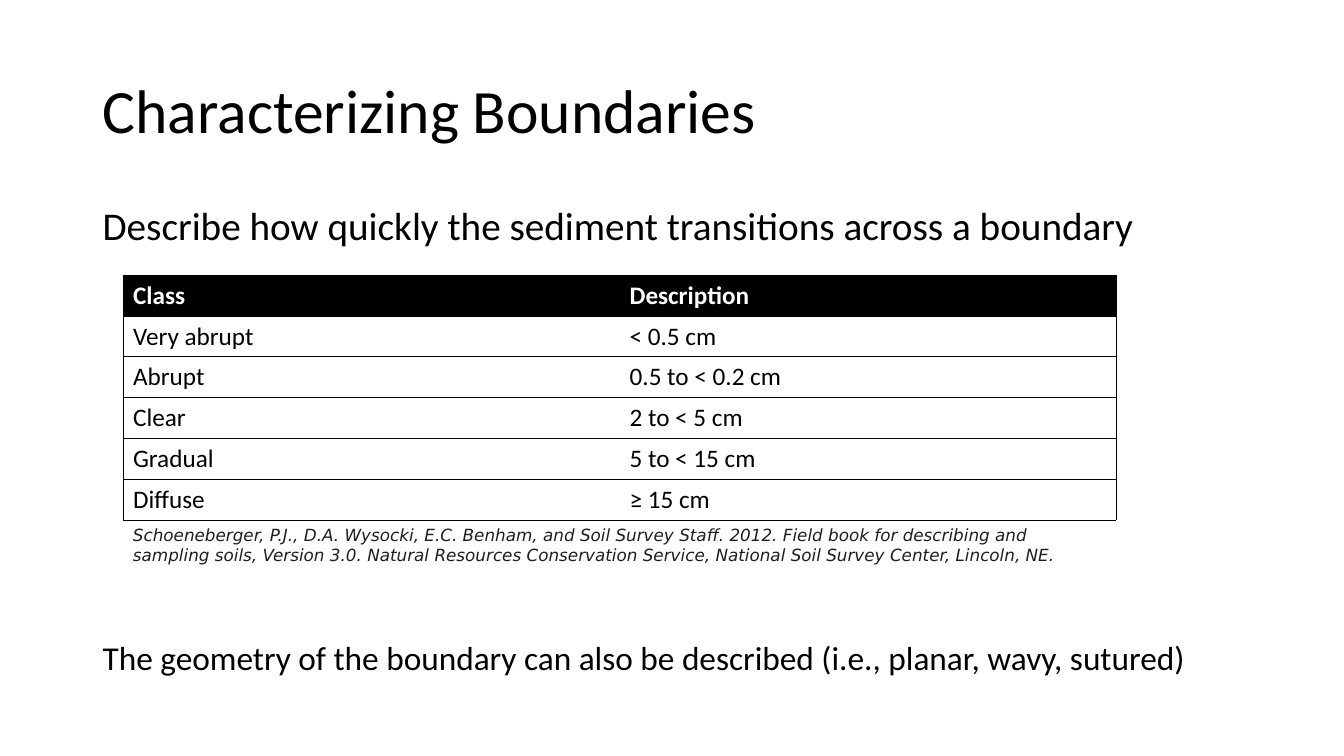
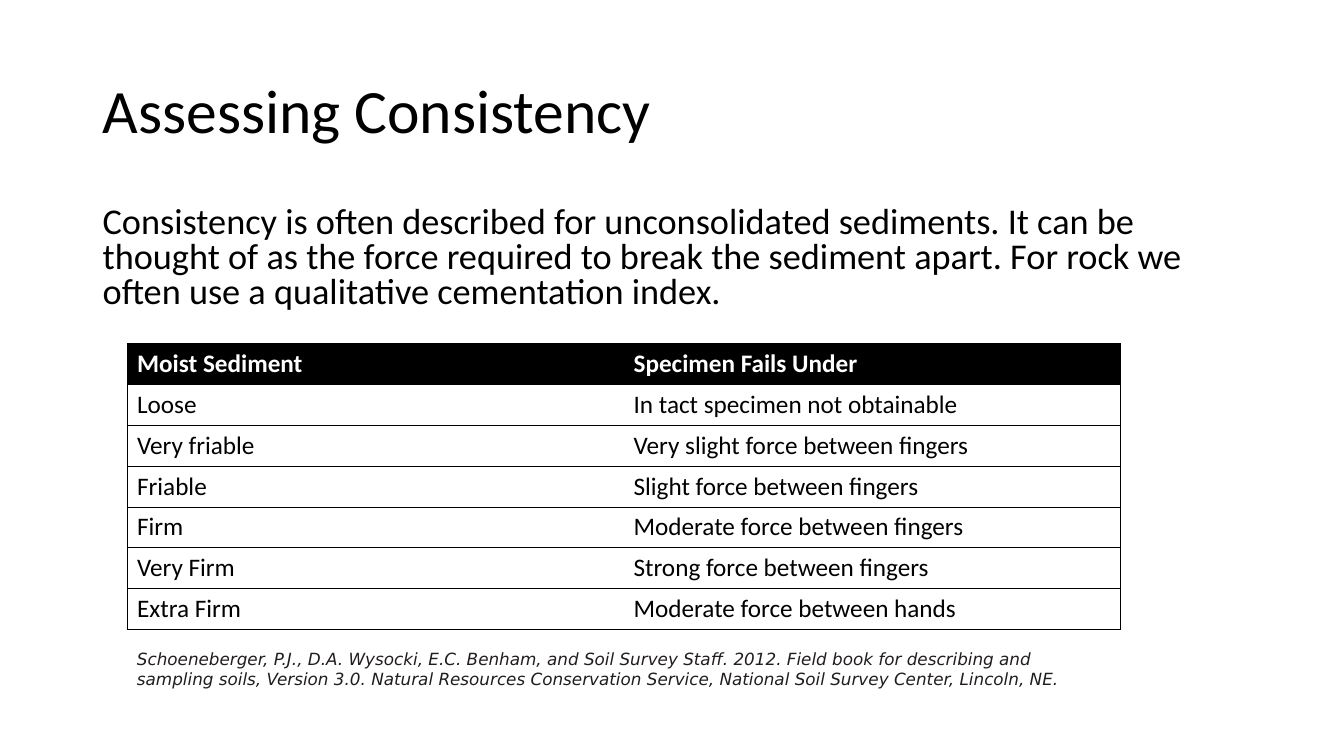
from dataclasses import dataclass

from lxml import etree
from pptx import Presentation
from pptx.dml.color import RGBColor
from pptx.enum.text import MSO_ANCHOR
from pptx.oxml.ns import qn
from pptx.slide import Slide
from pptx.table import _Cell
from pptx.text.text import TextFrame
from pptx.util import Inches, Pt

TOP, MIDDLE = MSO_ANCHOR.TOP, MSO_ANCHOR.MIDDLE
BLACK, WHITE, CITATION_INK = "000000", "FFFFFF", "211D1E"
BODY_FONT, CITATION_FONT = "Calibri", "DejaVu Sans"
MARGIN = 0.92
TABLE_W, ROW_H = 9.85, 0.405
BORDER_PT = 0.5
CITATION = (
    "Schoeneberger, P.J., D.A. Wysocki, E.C. Benham, and Soil Survey Staff. 2012. "
    "Field book for describing and sampling soils, Version 3.0. Natural Resources "
    "Conservation Service, National Soil Survey Center, Lincoln, NE."
)


@dataclass(frozen=True)
class Passage:
    text: str
    top: float
    width: float
    height: float
    size: float
    spacing: float


@dataclass(frozen=True)
class ClassTable:
    left: float
    top: float
    rows: list[tuple[str, str]]
    citation_top: float


@dataclass(frozen=True)
class Page:
    title: str
    passages: list[Passage]
    table: ClassTable


PAGES = [
    Page(
        "Characterizing Boundaries",
        [
            Passage("Describe how quickly the sediment transitions across a boundary",
                    2, 11.05, 0.58, 28, 0.9),
            Passage("The geometry of the boundary can also be described "
                    "(i.e., planar, wavy, sutured)",
                    6.35, 11.05, 0.58, 23.8, 0.8),
        ],
        ClassTable(1.22, 2.73, [
            ("Class", "Description"),
            ("Very abrupt", "< 0.5 cm"),
            ("Abrupt", "0.5 to < 0.2 cm"),
            ("Clear", "2 to < 5 cm"),
            ("Gradual", "5 to < 15 cm"),
            ("Diffuse", "≥ 15 cm"),
        ], 5.16),
    ),
    Page(
        "Assessing Consistency",
        [
            Passage("Consistency is often described for unconsolidated sediments. "
                    "It can be thought of as the force required to break the sediment "
                    "apart. For rock we often use a qualitative cementation index.",
                    2, 11.5, 1.18, 25.9, 0.8),
        ],
        ClassTable(1.26, 3.41, [
            ("Moist Sediment", "Specimen Fails Under"),
            ("Loose", "In tact specimen not obtainable"),
            ("Very friable", "Very slight force between fingers"),
            ("Friable", "Slight force between fingers"),
            ("Firm", "Moderate force between fingers"),
            ("Very Firm", "Strong force between fingers"),
            ("Extra Firm", "Moderate force between hands"),
        ], 6.39),
    ),
]


def rgb(color: str) -> RGBColor:
    return RGBColor.from_string(color)


def write(tf: TextFrame, text: str, *, size: float, color: str = BLACK,
          font: str = BODY_FONT, bold: bool = False, italic: bool = False,
          spacing: float = 1.0) -> None:
    p = tf.paragraphs[0]
    p.line_spacing = spacing
    r = p.add_run()
    r.text = text
    r.font.name = font
    r.font.size = Pt(size)
    r.font.bold = bold
    r.font.italic = italic
    r.font.color.rgb = rgb(color)


def add_box(s: Slide, left: float, top: float, width: float, height: float,
            anchor: MSO_ANCHOR = TOP) -> TextFrame:
    sp = s.shapes.add_textbox(Inches(left), Inches(top), Inches(width), Inches(height))
    tf = sp.text_frame
    tf.word_wrap = True
    tf.vertical_anchor = anchor
    return tf


def set_borders(cell: _Cell, visible: dict[str, bool]) -> None:
    tc_pr = cell._tc.get_or_add_tcPr()
    for side, shown in visible.items():
        ln = etree.SubElement(tc_pr, qn(f"a:ln{side}"), w=str(Pt(BORDER_PT)))
        if shown:
            fill = etree.SubElement(ln, qn("a:solidFill"))
            etree.SubElement(fill, qn("a:srgbClr"), val=BLACK)
        else:
            etree.SubElement(ln, qn("a:noFill"))


def add_class_table(s: Slide, spec_table: ClassTable) -> None:
    rows = spec_table.rows
    columns = len(rows[0])
    table = s.shapes.add_table(
        len(rows), columns, Inches(spec_table.left), Inches(spec_table.top),
        Inches(TABLE_W), Inches(ROW_H * len(rows))).table
    table.horz_banding = False
    for i, values in enumerate(rows):
        table.rows[i].height = Inches(ROW_H)
        header = i == 0
        for j, value in enumerate(values):
            cell = table.cell(i, j)
            set_borders(cell, {"L": j == 0, "R": j == columns - 1, "T": True, "B": True})
            if header:
                cell.fill.solid()
                cell.fill.fore_color.rgb = rgb(BLACK)
            else:
                cell.fill.background()
            write(cell.text_frame, value, size=18, bold=header,
                  color=WHITE if header else BLACK)
    tf = add_box(s, spec_table.left, spec_table.citation_top, TABLE_W, 0.5)
    write(tf, CITATION, size=12, color=CITATION_INK, font=CITATION_FONT, italic=True)


def add_page(prs: Presentation, page: Page) -> None:
    s = prs.slides.add_slide(prs.slide_layouts[6])
    write(add_box(s, MARGIN, 0.4, 11.5, 1.45, MIDDLE), page.title, size=44, spacing=0.9)
    for passage in page.passages:
        tf = add_box(s, MARGIN, passage.top, passage.width, passage.height)
        write(tf, passage.text, size=passage.size, spacing=passage.spacing)
    add_class_table(s, page.table)


def main() -> None:
    prs = Presentation()
    prs.slide_width, prs.slide_height = Inches(13.33), Inches(7.5)
    for page in PAGES:
        add_page(prs, page)
    prs.save("out.pptx")


if __name__ == "__main__":
    main()
